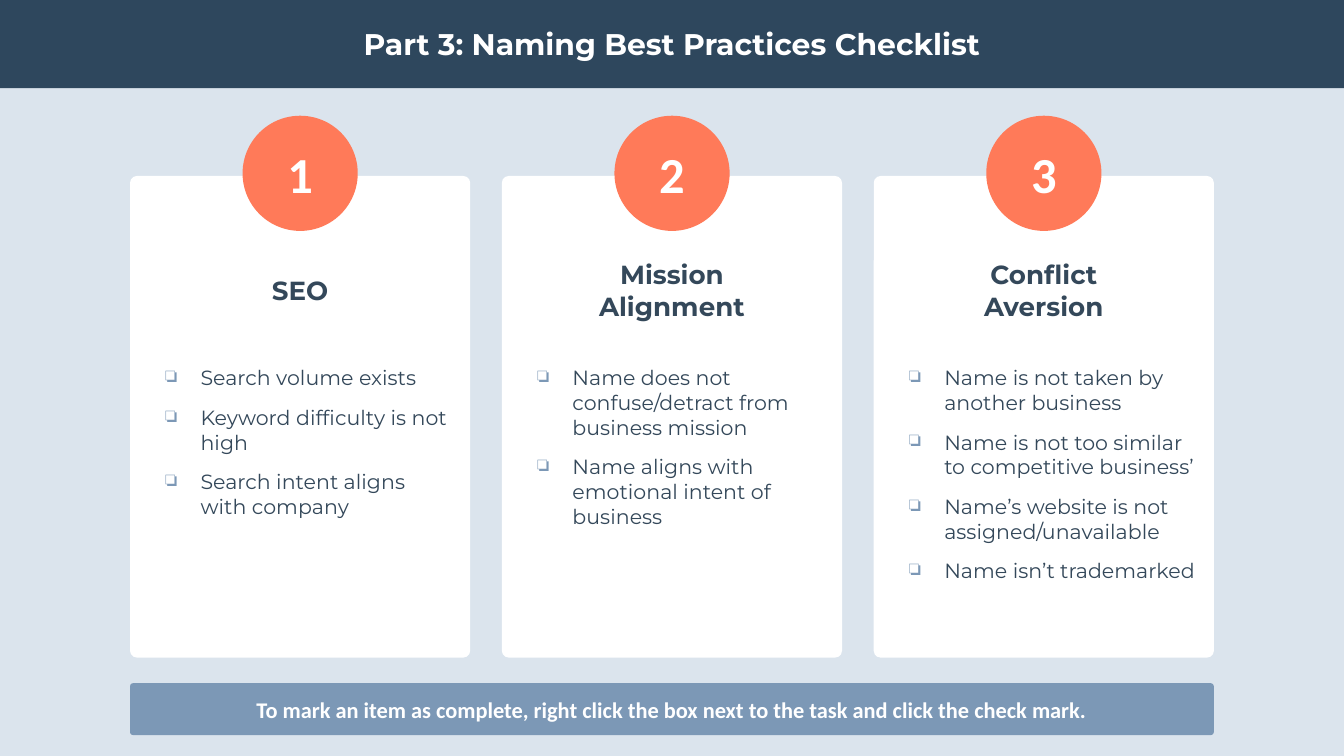
"""Build the naming best practices checklist slide."""
from dataclasses import dataclass

import lxml.etree
import pptx
import pptx.dml.color
import pptx.enum.shapes
import pptx.enum.text
import pptx.oxml.ns
import pptx.util

Pt = pptx.util.Pt
ROUND = pptx.enum.shapes.MSO_SHAPE.ROUNDED_RECTANGLE
OVAL = pptx.enum.shapes.MSO_SHAPE.OVAL
COLORS = {
    "back": "DBE4ED",
    "band": "2E475D",
    "text": "34485A",
    "steel": "7C98B6",
    "coral": "FF7A59",
    "white": "FFFFFF",
}
WIDTH, HEIGHT = 720, 405
LEFT, CARD, GAP = 69.7, 182.2, 17
TOP, TALL = 94.3, 258
DISC = 61.7
HEAD = 102.2
INSET = 5


@dataclass
class Card:
    """Hold one checklist card."""

    head: str
    items: list[str]


CARDS = [
    Card("SEO", [
        "Search volume exists",
        "Keyword difficulty is not high",
        "Search intent aligns with company",
    ]),
    Card("Mission Alignment", [
        "Name does not confuse/detract from business mission",
        "Name aligns with emotional intent of business",
    ]),
    Card("Conflict Aversion", [
        "Name is not taken by another business",
        "Name is not too similar to competitive business’",
        "Name’s website is not assigned/unavailable",
        "Name isn’t trademarked",
    ]),
]


def tint(name: str) -> pptx.dml.color.RGBColor:
    """Return a named colour."""
    return pptx.dml.color.RGBColor.from_string(COLORS[name])


def paint(shape, color: str) -> None:
    """Fill a shape with a flat colour."""
    shape.fill.solid()
    shape.fill.fore_color.rgb = tint(color)


def block(slide, kind, left: float, top: float, width: float, height: float,
          color: str, curve: float | None = None):
    """Add a flat preset shape."""
    shape = slide.shapes.add_shape(kind, Pt(left), Pt(top), Pt(width), Pt(height))
    shape.shadow.inherit = False
    shape.line.fill.background()
    paint(shape, color)
    if curve is not None:
        shape.adjustments[0] = curve
    return shape


def bullet(para) -> None:
    """Give a paragraph a hanging check box."""
    props = para._p.get_or_add_pPr()
    props.set("marL", str(Pt(27.4)))
    props.set("indent", str(Pt(-18.7)))
    qn = pptx.oxml.ns.qn
    color = lxml.etree.SubElement(props, qn("a:buClr"))
    lxml.etree.SubElement(color, qn("a:srgbClr"), val=COLORS["steel"])
    lxml.etree.SubElement(props, qn("a:buChar"), char="❏")


def write(shape, lines: list[str], *, size: float, color: str = "white",
          font: str = "Montserrat", bold: bool = True, boxes: bool = False,
          inset: float = INSET) -> None:
    """Write formatted lines into a shape, centred or as a checklist."""
    frame = shape.text_frame
    frame.word_wrap = True
    frame.auto_size = pptx.enum.text.MSO_AUTO_SIZE.NONE
    anchor = pptx.enum.text.MSO_ANCHOR
    frame.vertical_anchor = anchor.TOP if boxes else anchor.MIDDLE
    frame.margin_left = frame.margin_right = Pt(inset)
    frame.margin_top = frame.margin_bottom = Pt(inset)
    align = pptx.enum.text.PP_ALIGN
    for num, line in enumerate(lines):
        para = frame.add_paragraph() if num else frame.paragraphs[0]
        para.alignment = align.LEFT if boxes else align.CENTER
        if num:
            para.space_before = Pt(8)
        if boxes:
            bullet(para)
        run = para.add_run()
        run.text = line
        run.font.name, run.font.size, run.font.bold = font, Pt(size), bold
        run.font.color.rgb = tint(color)


def label(slide, left: float, top: float, width: float, height: float):
    """Add an empty text box."""
    return slide.shapes.add_textbox(Pt(left), Pt(top), Pt(width), Pt(height))


def draw(slide, card: Card, num: int) -> None:
    """Draw one numbered card."""
    left = LEFT + num * (CARD + GAP)
    mid = left + CARD / 2
    block(slide, ROUND, left, TOP, CARD, TALL, "white", 0.02)
    disc = block(slide, OVAL, mid - DISC / 2, 62, DISC, DISC, "coral")
    write(disc, [str(num + 1)], size=27, font="Calibri", inset=0)
    head = label(slide, mid - HEAD / 2, 133, HEAD, 45)
    write(head, [card.head], size=14, color="text")
    tasks = label(slide, left + 5.4, 190.8, 172.4, 128)
    write(tasks, card.items, size=11, color="text", bold=False, boxes=True)


def main() -> None:
    """Build and save the deck."""
    deck = pptx.Presentation()
    deck.slide_width, deck.slide_height = Pt(WIDTH), Pt(HEIGHT)
    slide = deck.slides.add_slide(deck.slide_layouts[5])
    paint(slide.background, "back")
    title = slide.shapes.title
    title.left, title.top, title.width, title.height = Pt(0), Pt(0), Pt(WIDTH), Pt(47.2)
    paint(title, "band")
    write(title, ["Part 3: Naming Best Practices Checklist"], size=16)
    for num, card in enumerate(CARDS):
        draw(slide, card, num)
    note = block(slide, ROUND, LEFT, 366, 3 * CARD + 2 * GAP, 27.8, "steel", 0.06)
    write(note, ["To mark an item as complete, right click the box next to "
                 "the task and click the check mark."], size=12, font="Calibri")
    deck.save("out.pptx")


if __name__ == "__main__":
    main()
